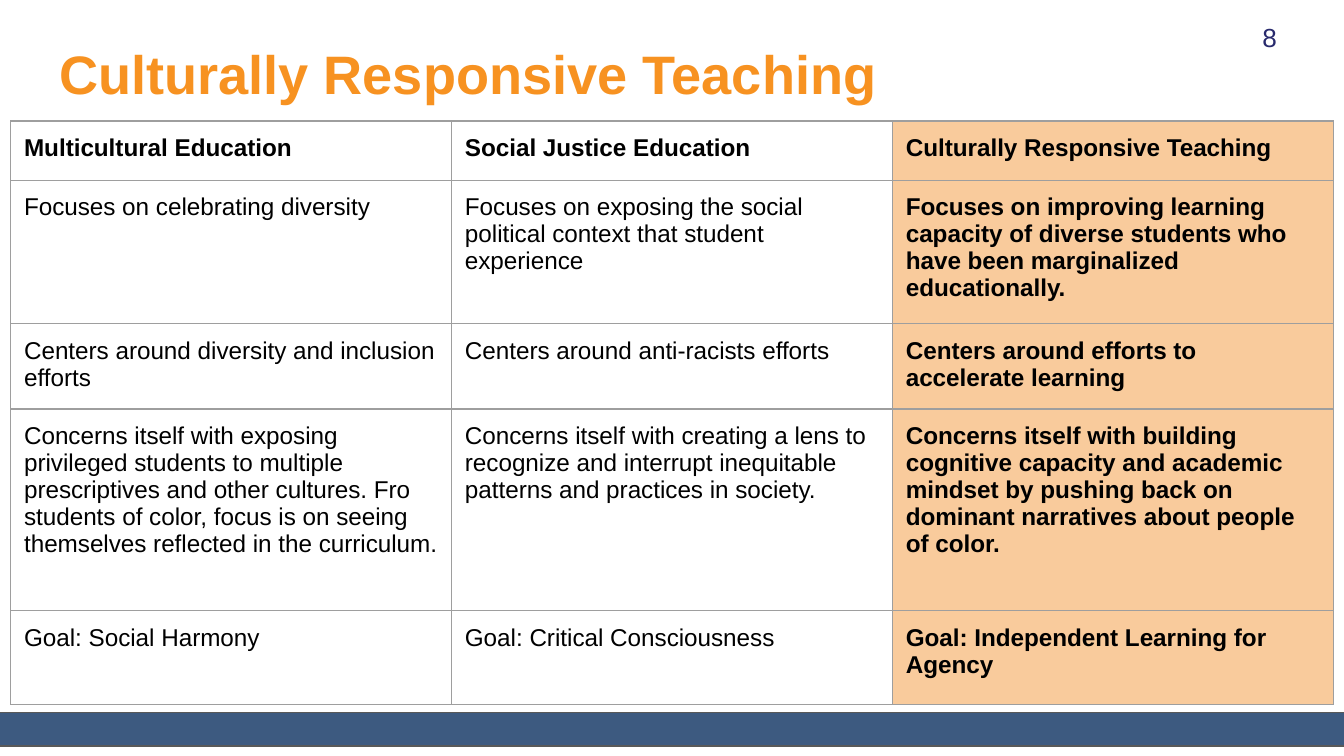
from lxml import etree
from pptx import Presentation
from pptx.dml.color import RGBColor
from pptx.enum.shapes import MSO_SHAPE
from pptx.enum.text import MSO_ANCHOR, PP_ALIGN
from pptx.oxml.ns import qn
from pptx.util import Pt

RECTANGLE = MSO_SHAPE.RECTANGLE
TOP, MIDDLE = MSO_ANCHOR.TOP, MSO_ANCHOR.MIDDLE
LEFT, RIGHT = PP_ALIGN.LEFT, PP_ALIGN.RIGHT
TITLE_ONLY = 5
INSET = 7.2
GRID_COLOR = "9E9E9E"
HIGHLIGHT = "F9CB9C"
ROW_HEIGHTS = [31.7, 77, 45.4, 108, 50.4]
COMPARISON = [
    ["Multicultural Education", "Social Justice Education", "Culturally Responsive Teaching"],
    ["Focuses on celebrating diversity",
     "Focuses on exposing the social political context that student experience",
     "Focuses on improving learning capacity of diverse students who have been "
     "marginalized educationally."],
    ["Centers around diversity and inclusion efforts",
     "Centers around anti-racists efforts",
     "Centers around efforts to accelerate learning"],
    ["Concerns itself with exposing privileged students to multiple prescriptives and "
     "other cultures. Fro students of color, focus is on seeing themselves reflected "
     "in the curriculum.",
     "Concerns itself with creating a lens to recognize and interrupt inequitable "
     "patterns and practices in society.",
     "Concerns itself with building cognitive capacity and academic mindset by pushing "
     "back on dominant narratives about people of color."],
    ["Goal: Social Harmony", "Goal: Critical Consciousness",
     "Goal: Independent Learning for Agency"],
]


def color(value):
    """Turn a hex string into a colour."""
    return RGBColor.from_string(value)


def place(shape, box):
    """Move and size a shape to a box in points."""
    shape.left, shape.top, shape.width, shape.height = map(Pt, box)


def write(frame, text, size, ink, bold=False, align=LEFT):
    """Fill a text frame with one formatted paragraph."""
    frame.word_wrap = True
    frame.text = text
    para = frame.paragraphs[0]
    para.alignment = align
    font = para.font
    font.name, font.size, font.bold = "Arial", Pt(size), bold
    font.color.rgb = color(ink)
    return para


def set_insets(frame, anchor):
    """Give a text frame even insets and an anchor."""
    frame.margin_left = frame.margin_right = Pt(INSET)
    frame.margin_top = frame.margin_bottom = Pt(INSET)
    frame.vertical_anchor = anchor


def add_footer_bar(page, box):
    """Draw the band along the bottom."""
    bar = page.shapes.add_shape(RECTANGLE, *map(Pt, box))
    bar.shadow.inherit = False
    bar.fill.solid()
    bar.fill.fore_color.rgb = color("3D5A80")
    bar.line.color.rgb = color("595959")
    bar.line.width = Pt(0.75)


def set_title(page, box):
    """Place and write the slide title."""
    title = page.shapes.title
    place(title, box)
    set_insets(title.text_frame, TOP)
    para = write(title.text_frame, "Culturally Responsive Teaching", 29, "F79221", True)
    para.line_spacing = 1.1


def add_page_number(page, box):
    """Write the page number in the corner."""
    frame = page.shapes.add_textbox(*map(Pt, box)).text_frame
    set_insets(frame, MIDDLE)
    write(frame, "8", 14, "282A6D", align=RIGHT)


def add_borders(cell):
    """Draw thin lines on all four sides of a cell, ahead of its fill."""
    properties = cell._tc.get_or_add_tcPr()
    for index, side in enumerate(("a:lnL", "a:lnR", "a:lnT", "a:lnB")):
        line = etree.Element(qn(side), w=str(Pt(0.75)))
        fill = etree.SubElement(line, qn("a:solidFill"))
        etree.SubElement(fill, qn("a:srgbClr"), val=GRID_COLOR)
        properties.insert(index, line)


def add_comparison(page, box):
    """Build the comparison table with its last column highlighted."""
    rows, columns = len(COMPARISON), len(COMPARISON[0])
    table = page.shapes.add_table(rows, columns, *map(Pt, box)).table
    for column in table.columns:
        column.width = Pt(box[2] / columns)
    for row, height, texts in zip(table.rows, ROW_HEIGHTS, COMPARISON):
        row.height = Pt(height)
        for index, (cell, text) in enumerate(zip(row.cells, texts)):
            highlighted = index == columns - 1
            cell.margin_left = cell.margin_top = cell.margin_bottom = Pt(INSET)
            cell.margin_right = Pt(6.5)
            cell.vertical_anchor = TOP
            if highlighted:
                cell.fill.solid()
                cell.fill.fore_color.rgb = color(HIGHLIGHT)
            else:
                cell.fill.background()
            add_borders(cell)
            bold = highlighted or texts is COMPARISON[0]
            write(cell.text_frame, text, 13, "000000", bold)


def main():
    """Build the slide and save the deck."""
    deck = Presentation()
    deck.slide_width, deck.slide_height = Pt(720), Pt(405)
    page = deck.slides.add_slide(deck.slide_layouts[TITLE_ONLY])
    add_footer_bar(page, (-0.7, 381.6, 722.9, 18))
    set_title(page, (24.5, 10.8, 671, 45.4))
    add_page_number(page, (648, 4.3, 43.2, 31))
    add_comparison(page, (5.7, 64.8, 708.6, sum(ROW_HEIGHTS)))
    deck.save("out.pptx")


if __name__ == "__main__":
    main()
